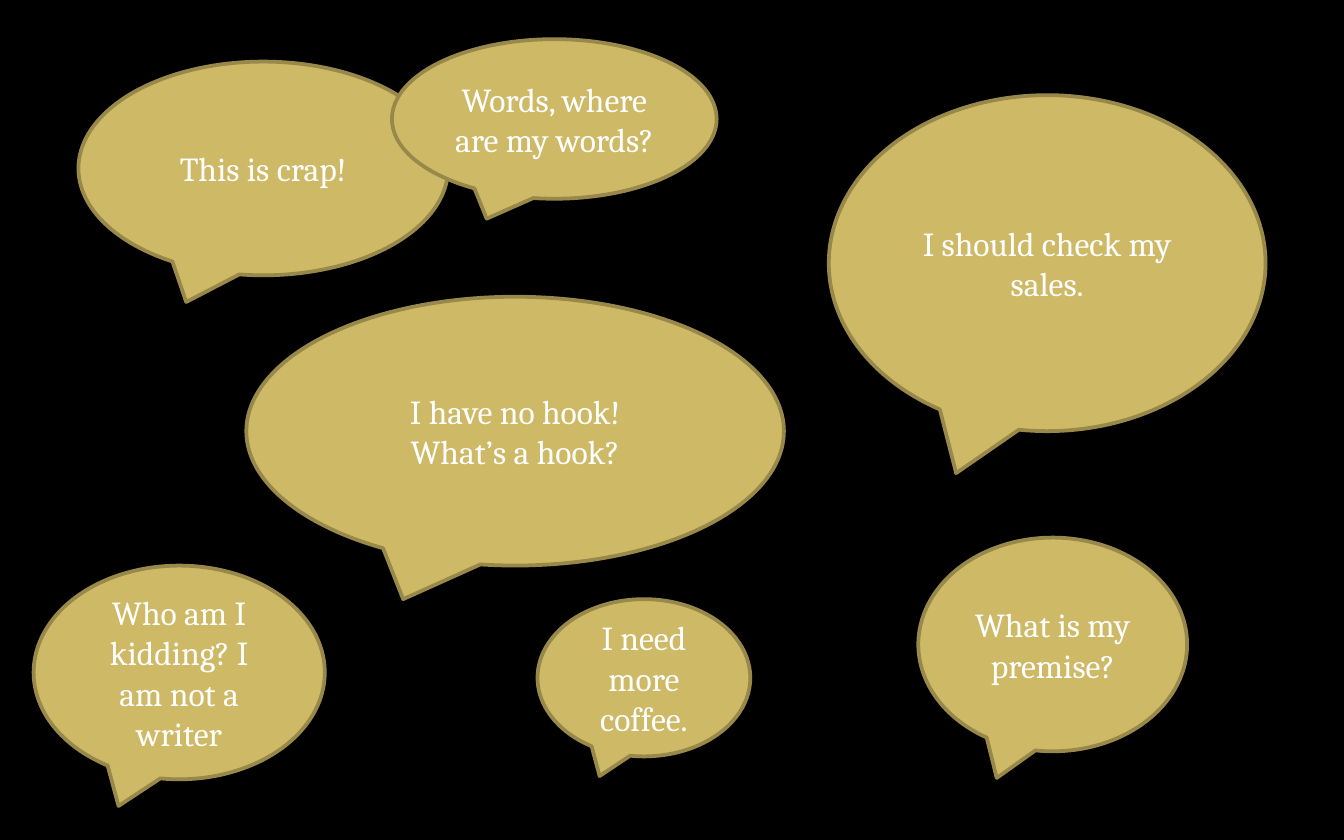
from pptx import Presentation
from pptx.dml.color import RGBColor
from pptx.enum.shapes import MSO_SHAPE
from pptx.enum.text import MSO_ANCHOR, PP_ALIGN
from pptx.util import Pt

BUBBLE = MSO_SHAPE.OVAL_CALLOUT
CENTER = PP_ALIGN.CENTER
MIDDLE = MSO_ANCHOR.MIDDLE

BLACK = RGBColor(0x00, 0x00, 0x00)
GOLD = RGBColor(0xCE, 0xB9, 0x66)
DARK_GOLD = RGBColor(0x98, 0x89, 0x4B)
WHITE = RGBColor(0xFF, 0xFF, 0xFF)

BLANK_LAYOUT = 6

# Left, top, width and height in points, then the text, from back to front
THOUGHTS = [
    (42, 33, 198, 114.5, "This is crap!"),
    (210, 21, 174, 85.5, "Words, where are my words?"),
    (132, 159, 288, 144, "I have no hook!\nWhat’s a hook?"),
    (444, 51, 234, 180, "I should check my sales."),
    (492, 288, 144, 114.5, "What is my premise?"),
    (18, 303, 156, 114.5, "Who am I kidding? I am not a writer"),
    (288, 321, 114, 84.25, "I need more coffee."),
]


class SlideBuilder:
    """Holds the bubble style and the slide being drawn."""

    font_name = "Cambria"
    font_size = Pt(18)
    line_width = Pt(2)

    def __init__(self, slide):
        self.slide = slide

    def background(self, color):
        fill = self.slide.background.fill
        fill.solid()
        fill.fore_color.rgb = color

    def bubble(self, left, top, width, height, text):
        shape = self.slide.shapes.add_shape(
            BUBBLE, Pt(left), Pt(top), Pt(width), Pt(height))
        shape.shadow.inherit = False
        shape.fill.solid()
        shape.fill.fore_color.rgb = GOLD
        shape.line.color.rgb = DARK_GOLD
        shape.line.width = self.line_width

        frame = shape.text_frame
        frame.word_wrap = True
        frame.vertical_anchor = MIDDLE
        frame.text = text
        for paragraph in frame.paragraphs:
            paragraph.alignment = CENTER
            paragraph.font.name = self.font_name
            paragraph.font.size = self.font_size
            paragraph.font.color.rgb = WHITE


def main():
    presentation = Presentation()
    presentation.slide_width = Pt(720)
    presentation.slide_height = Pt(450)
    slide = presentation.slides.add_slide(
        presentation.slide_layouts[BLANK_LAYOUT])

    builder = SlideBuilder(slide)
    builder.background(BLACK)
    for thought in THOUGHTS:
        builder.bubble(*thought)

    presentation.save("out.pptx")


if __name__ == "__main__":
    main()
